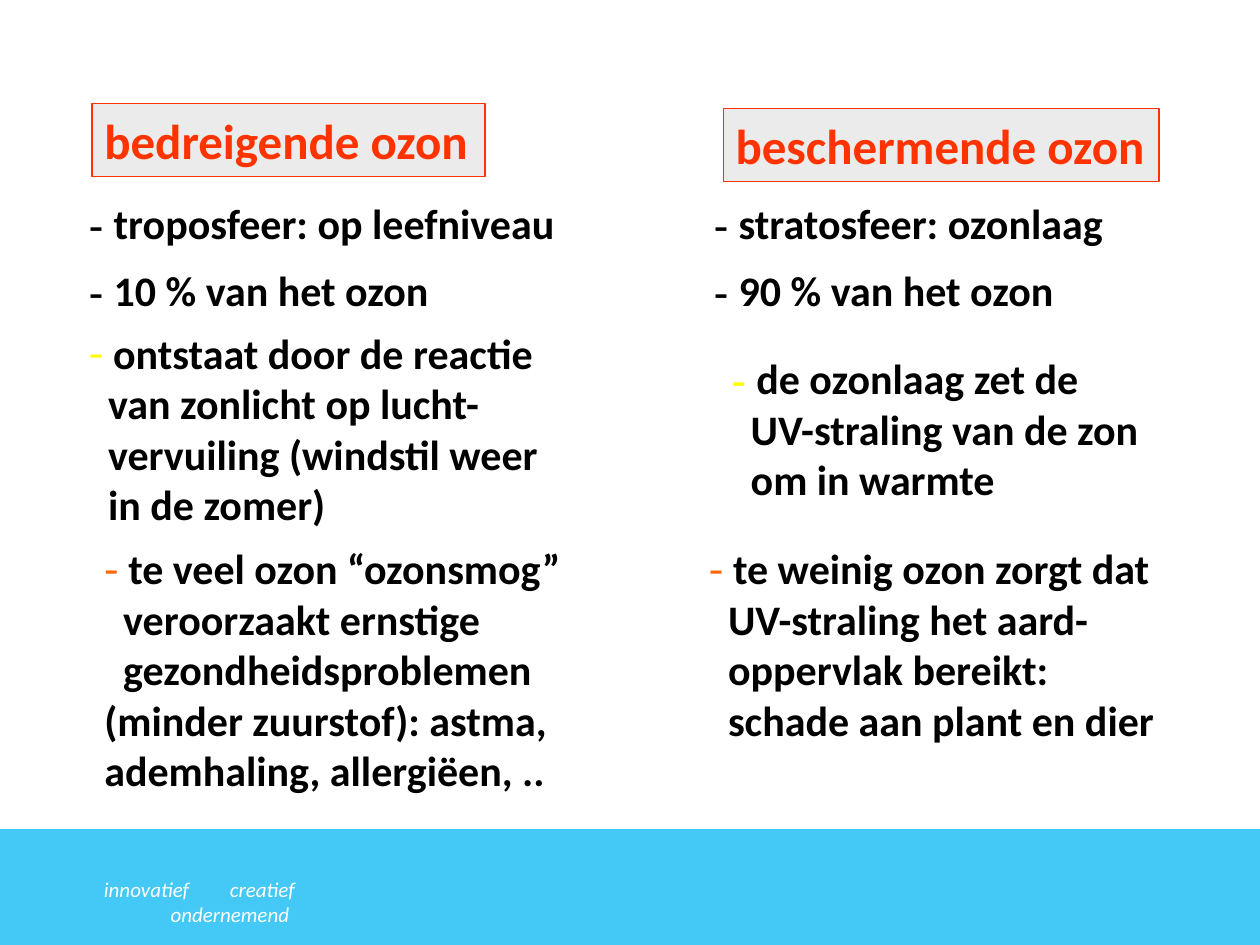
from lxml.etree import SubElement
from pptx import Presentation
from pptx.dml.color import RGBColor
from pptx.enum.shapes import MSO_SHAPE
from pptx.enum.text import MSO_AUTO_SIZE, PP_ALIGN
from pptx.oxml.ns import qn
from pptx.util import Inches, Pt

WIDE, HIGH = Inches(10), Inches(7.5)
BLACK = RGBColor(0, 0, 0)
WHITE = RGBColor(255, 255, 255)
SKY = RGBColor(0x44, 0xC8, 0xF5)
GREY = RGBColor(0xEB, 0xEB, 0xEB)
RED = RGBColor(0xFF, 0x33, 0x00)
YELLOW = RGBColor(255, 255, 0)
ORANGE = RGBColor(0xFF, 0x66, 0x00)

BODY = {"name": "Calibri", "size": Pt(24), "bold": True}
DASH = {**BODY, "name": "Times New Roman"}
HEAD = {**BODY, "size": Pt(28)}
FOOT = {"name": "Calibri", "size": Pt(12), "italic": True}
FRAME = {"word_wrap": False, "auto_size": MSO_AUTO_SIZE.SHAPE_TO_FIT_TEXT}
HANG, STEP = Inches(0.19), Inches(0.15)


def style(item, form):
    for key, value in form.items():
        setattr(item, key, value)


def place(left, top, width, height):
    return [int(share * side / 100) for share, side in
            zip((left, top, width, height), (WIDE, HIGH, WIDE, HIGH))]


def write(para, text, form, color):
    run = para.add_run()
    run.text = text
    style(run.font, form)
    run.font.color.rgb = color


def add_box(slide, area, fill):
    box = slide.shapes.add_shape(MSO_SHAPE.RECTANGLE, *place(*area))
    box.shadow.inherit = False
    box.fill.solid()
    box.fill.fore_color.rgb = fill
    box.line.fill.background()
    return box


def add_head(slide, area, text):
    box = add_box(slide, area, GREY)
    box.line.color.rgb = RED
    box.line.width = Pt(0.75)
    style(box.text_frame, FRAME)
    para = box.text_frame.paragraphs[0]
    para.alignment = PP_ALIGN.LEFT
    write(para, text, HEAD, RED)


def add_dash(para, color):
    props = para._p.get_or_add_pPr()
    props.set("marL", str(HANG))
    props.set("indent", str(-HANG))
    tint = SubElement(props, qn("a:buClr"))
    SubElement(tint, qn("a:srgbClr"), val=str(color))
    SubElement(props, qn("a:buFont"), typeface=DASH["name"])
    SubElement(props, qn("a:buChar"), char="-")


def add_note(slide, area, lines, color=BLACK, bullet=False, inset=0):
    frame = slide.shapes.add_textbox(*place(*area)).text_frame
    style(frame, FRAME)
    for row, line in enumerate(lines):
        para = frame.add_paragraph() if row else frame.paragraphs[0]
        if row == 0 and bullet:
            add_dash(para, color)
        elif row == 0:
            write(para, "- ", DASH, color)
        elif row <= inset:
            para._p.get_or_add_pPr().set("marL", str(STEP))
        write(para, line, BODY, BLACK)


def add_foot(slide):
    add_box(slide, (0, 87.73, 100, 12.27), SKY)
    frame = slide.shapes.add_textbox(*place(3.9, 92.13, 28.7, 4)).text_frame
    style(frame, {"word_wrap": False, "margin_left": 0, "margin_right": 0})
    para = frame.paragraphs[0]
    para.alignment = PP_ALIGN.CENTER
    write(para, "innovatief\tcreatief\tondernemend", FOOT, WHITE)


def main():
    deck = Presentation()
    style(deck, {"slide_width": WIDE, "slide_height": HIGH})
    slide = deck.slides.add_slide(deck.slide_layouts[6])
    add_foot(slide)
    add_head(slide, (7.3, 10.93, 31.2, 7.73), "bedreigende ozon")
    add_head(slide, (57.4, 11.47, 34.6, 7.73), "beschermende ozon")
    for left, top, width, text in (
        (6.1, 20.27, 39.3, "troposfeer: op leefniveau"),
        (55.7, 20.27, 33.7, "stratosfeer: ozonlaag"),
        (6.1, 27.33, 30.3, "10 % van het ozon"),
        (55.7, 27.33, 30.3, "90 % van het ozon"),
    ):
        add_note(slide, (left, top, width, 6.67), [text])
    add_note(slide, (6.1, 34, 39.4, 22.93), [
        "ontstaat door de reactie", "van zonlicht op lucht-",
        "vervuiling (windstil weer", "in de zomer)"], YELLOW, True, 3)
    add_note(slide, (57.1, 36.67, 34.7, 17.47), [
        "de ozonlaag zet de", "UV-straling van de zon",
        "om in warmte"], YELLOW, False, 2)
    add_note(slide, (7.3, 56.8, 39, 28.27), [
        "te veel ozon “ozonsmog”", "veroorzaakt ernstige",
        "gezondheidsproblemen", "(minder zuurstof): astma,",
        "ademhaling, allergiëen, .."], ORANGE, True, 2)
    add_note(slide, (55.3, 56.8, 38.7, 22.93), [
        "te weinig ozon zorgt dat", "UV-straling het aard-",
        "oppervlak bereikt:", "schade aan plant en dier"], ORANGE, True, 3)
    deck.save("out.pptx")


if __name__ == "__main__":
    main()
